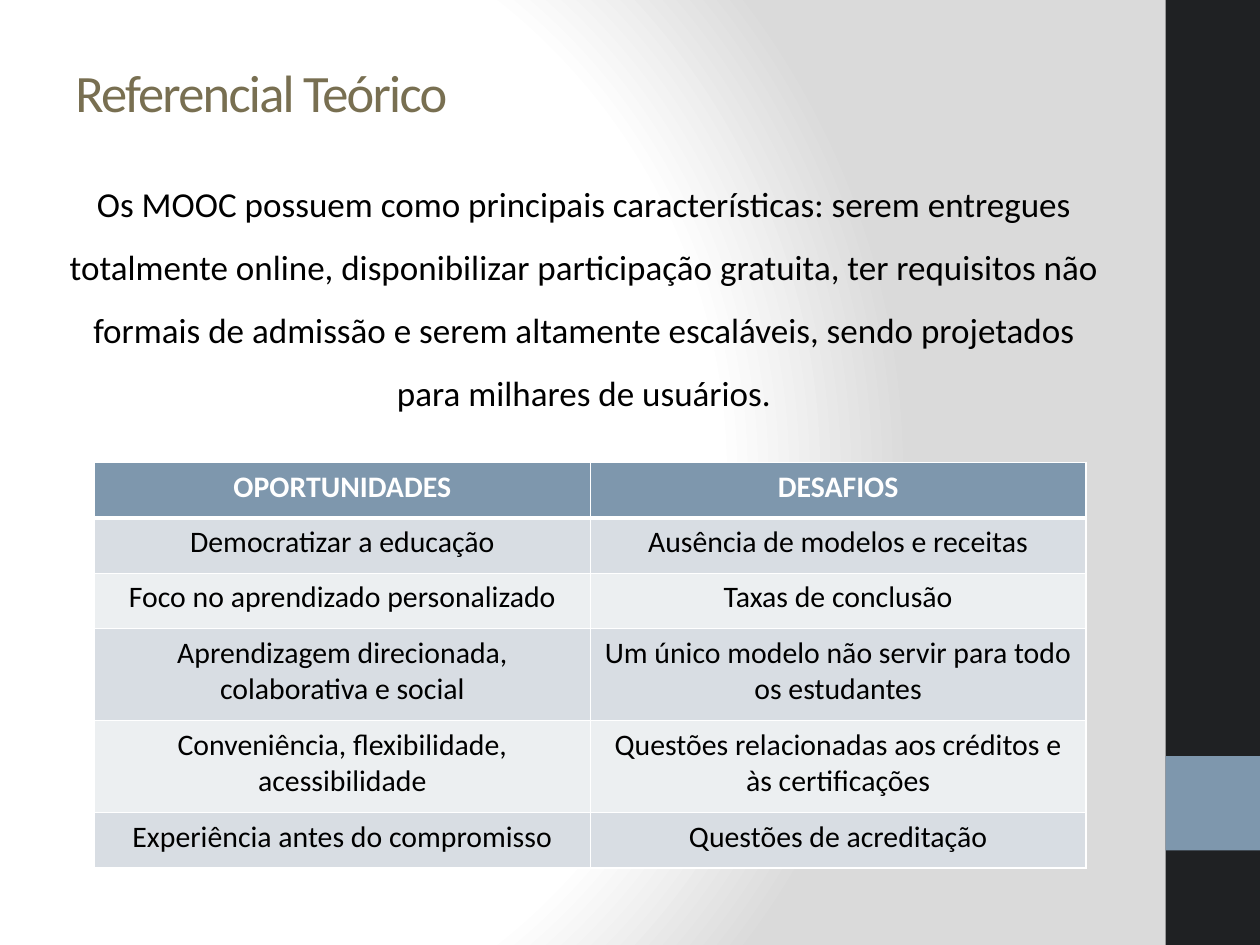
from lxml import etree
from pptx import Presentation, util as u
from pptx.dml.color import RGBColor
from pptx.enum import shapes, text
from pptx.oxml import parse_xml
from pptx.oxml.ns import nsdecls, qn

W, H = 10, 7.5
FONT = "Calibri"
WHITE, BLACK, DARK, BLUE, GOLD = "FFFFFF", "000000", "1F2123", "7E97AD", "786F51"
BANDS = ("D8DDE3", "ECEFF1")
SIDE = 0.925  # left edge of the side bar, share of the width

INTRO = (
    "Os MOOC possuem como principais características: serem entregues "
    "totalmente online, disponibilizar participação gratuita, ter requisitos "
    "não formais de admissão e serem altamente escaláveis, sendo projetados "
    "para milhares de usuários."
)
ROWS = [
    ("OPORTUNIDADES", "DESAFIOS"),
    ("Democratizar a educação", "Ausência de modelos e receitas"),
    ("Foco no aprendizado personalizado", "Taxas de conclusão"),
    ("Aprendizagem direcionada, colaborativa e social",
     "Um único modelo não servir para todo os estudantes"),
    ("Conveniência, flexibilidade, acessibilidade",
     "Questões relacionadas aos créditos e às certificações"),
    ("Experiência antes do compromisso", "Questões de acreditação"),
]
ONE_LINE, TWO_LINES = 0.44, 0.73
ROW_HEIGHTS = [ONE_LINE] * 3 + [TWO_LINES] * 2 + [ONE_LINE]


def color(hex_):
    return RGBColor.from_string(hex_)


def add_background(s):
    """Radial gradient, white in the middle and grey outside."""
    stops = "".join(
        f'<a:gs pos="{pos * 1000}"><a:srgbClr val="{c}"/></a:gs>'
        for pos, c in ((0, WHITE), (75, WHITE), (100, "DADADA")))
    s.element.cSld.insert(0, parse_xml(
        f'<p:bg {nsdecls("p", "a")}><p:bgPr><a:gradFill rotWithShape="1">'
        f'<a:gsLst>{stops}</a:gsLst><a:path path="circle">'
        '<a:fillToRect l="20000" t="50000" r="100000" b="50000"/></a:path>'
        '</a:gradFill><a:effectLst/></p:bgPr></p:bg>'))


def add_block(s, x, y, w, h, fill):
    """Plain rectangle, placed in shares of the slide's size."""
    sp = s.shapes.add_shape(
        shapes.MSO_SHAPE.RECTANGLE, u.Inches(x * W), u.Inches(y * H),
        u.Inches(w * W), u.Inches(h * H))
    sp.shadow.inherit = False
    sp.fill.solid()
    sp.fill.fore_color.rgb = color(fill)
    sp.line.fill.background()


def add_run(p, words, size, hex_, bold=False):
    r = p.add_run()
    r.text = words
    r.font.name, r.font.size, r.font.bold = FONT, u.Pt(size), bold
    r.font.color.rgb = color(hex_)
    return r


def add_text(s, box, words, size, hex_, anchor):
    tf = s.shapes.add_textbox(*(u.Inches(v) for v in box)).text_frame
    tf.word_wrap = True
    tf.vertical_anchor = anchor
    p = tf.paragraphs[0]
    return p, add_run(p, words, size, hex_)


def set_borders(cell, bottom):
    tcPr = cell._tc.get_or_add_tcPr()
    widths = {"a:lnL": 1, "a:lnR": 1, "a:lnT": 1, "a:lnB": bottom}
    for i, (tag, width) in enumerate(widths.items()):
        ln = etree.Element(qn(tag), w=str(u.Pt(width)))
        fill = etree.SubElement(ln, qn("a:solidFill"))
        etree.SubElement(fill, qn("a:srgbClr"), val=WHITE)
        tcPr.insert(i, ln)


def add_table(s, x, y, w):
    table = s.shapes.add_table(
        len(ROWS), len(ROWS[0]), u.Inches(x), u.Inches(y),
        u.Inches(w), u.Inches(sum(ROW_HEIGHTS))).table
    for i, (row, height) in enumerate(zip(ROWS, ROW_HEIGHTS)):
        table.rows[i].height = u.Inches(height)
        head = i == 0
        for j, words in enumerate(row):
            cell = table.cell(i, j)
            cell.fill.solid()
            cell.fill.fore_color.rgb = color(BLUE if head else BANDS[(i - 1) % 2])
            set_borders(cell, 3 if i == 0 else 1)
            p = cell.text_frame.paragraphs[0]
            p.alignment = text.PP_ALIGN.CENTER
            add_run(p, words, 17, WHITE if head else BLACK, head)


def main():
    prs = Presentation()
    prs.slide_width, prs.slide_height = u.Inches(W), u.Inches(H)
    s = prs.slides.add_slide(prs.slide_layouts[6])

    # Background and side bar
    add_background(s)
    add_block(s, SIDE, 0, 1 - SIDE, 1, DARK)
    add_block(s, SIDE, 0.8, 1 - SIDE, 0.1, BLUE)

    # Title, with tightened letters
    _, r = add_text(s, (0.5, 0.3, 8.33, 0.85), "Referencial Teórico",
                    30, GOLD, text.MSO_ANCHOR.MIDDLE)
    r.font._element.set("spc", "-100")

    # Introduction
    p, _ = add_text(s, (0.28, 1.23, 8.59, 2.05), INTRO,
                    20, BLACK, text.MSO_ANCHOR.TOP)
    p.alignment = text.PP_ALIGN.CENTER
    p.line_spacing = 1.5
    p.space_before = u.Pt(4)
    p._p.get_or_add_pPr().set("marL", str(u.Inches(0.12)))

    # Opportunities and challenges
    add_table(s, 0.75, 3.67, 7.87)

    prs.save("out.pptx")


if __name__ == "__main__":
    main()
